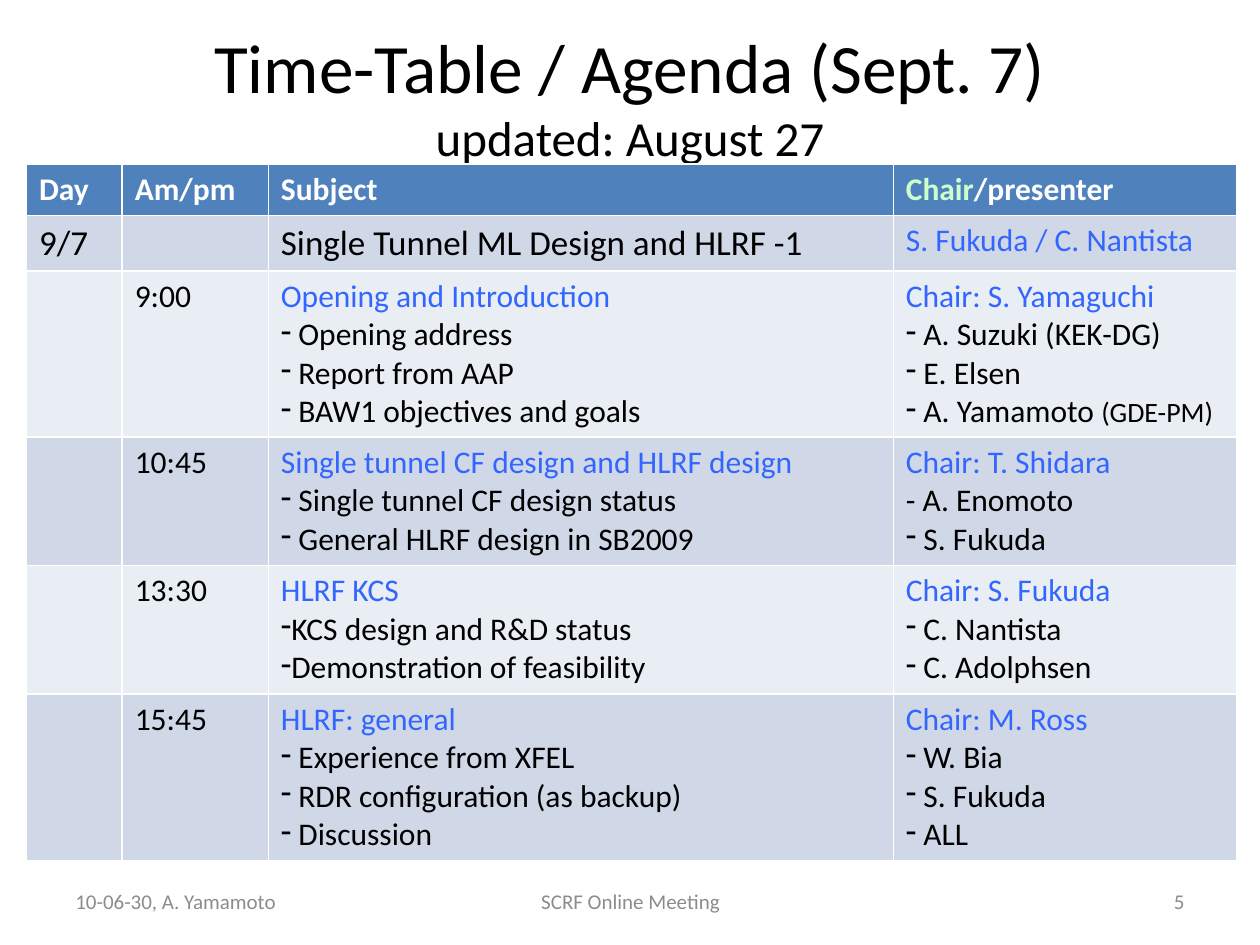
import pptx
import pptx.dml.color
import pptx.enum.text
import pptx.util
from lxml import etree
from pptx.util import Inches

FONT = "Calibri"
COLORS = {
    "text": "000000",
    "heading": "3366FF",
    "header_text": "FFFFFF",
    "chair": "CCFFCC",
    "footer": "8C8C8C",
    "header_fill": "4F81BD",
    "dark_band": "D0D8E8",
    "light_band": "E9EDF4",
}
ALIGN = pptx.enum.text.PP_ALIGN

COLUMN_WIDTHS = [0.76, 1.16, 4.96, 2.73]
ROW_HEIGHTS = [0.41, 0.44, 1.32, 1.02, 1.02, 1.32]
HEADERS = ["Day", "Am/pm", "Subject"]

# Start time, subject lines, presenter lines; the first line is the heading
SESSIONS = [
    ("9:00",
     ["Opening and Introduction", " Opening address", " Report from AAP",
      " BAW1 objectives and goals"],
     ["Chair: S. Yamaguchi", " A. Suzuki (KEK-DG)", " E. Elsen",
      " A. Yamamoto "]),
    ("10:45",
     ["Single tunnel CF design and HLRF design",
      " Single tunnel CF design status", " General HLRF design in SB2009"],
     ["Chair: T. Shidara", "- A. Enomoto", " S. Fukuda"]),
    ("13:30",
     ["HLRF KCS", "KCS design and R&D status", "Demonstration of feasibility"],
     ["Chair: S. Fukuda", " C. Nantista", " C. Adolphsen"]),
    ("15:45",
     ["HLRF: general", " Experience from XFEL",
      " RDR configuration (as backup)", " Discussion"],
     ["Chair: M. Ross", " W. Bia", " S. Fukuda", " ALL"]),
]


def rgb(name):
    return pptx.dml.color.RGBColor.from_string(COLORS[name])


def style_run(run, size=18, color="text", bold=False):
    run.font.name = FONT
    run.font.size = pptx.util.Pt(size)
    run.font.bold = bold
    run.font.color.rgb = rgb(color)


def add_run(paragraph, text, **style):
    run = paragraph.add_run()
    run.text = text
    style_run(run, **style)


def add_dash_bullet(paragraph):
    properties = paragraph._p.get_or_add_pPr()
    properties.set("marL", "0")
    properties.set("indent", "0")
    bullet = etree.SubElement(properties, pptx.oxml.ns.qn("a:buChar"))
    bullet.set("char", "-")


def add_label(slide, left, top, width, height, text, align, sizes, color):
    """Text box with one size for each line of its text."""
    box = slide.shapes.add_textbox(*map(Inches, (left, top, width, height)))
    frame = box.text_frame
    frame.word_wrap = True
    frame.vertical_anchor = pptx.enum.text.MSO_ANCHOR.MIDDLE
    paragraph = frame.paragraphs[0]
    paragraph.text = text
    paragraph.alignment = align
    for run, size in zip(paragraph.runs, sizes):
        style_run(run, size, color)


def fill_lines(cell, lines):
    """Coloured heading line followed by dashed items."""
    cell.text_frame.text = "\n".join(lines)
    for index, paragraph in enumerate(cell.text_frame.paragraphs):
        if index and not lines[index].startswith("-"):
            add_dash_bullet(paragraph)
        style_run(paragraph.runs[0], color="text" if index else "heading")


def add_agenda(slide):
    agenda = slide.shapes.add_table(
        len(ROW_HEIGHTS), len(COLUMN_WIDTHS), Inches(0.21), Inches(1.3),
        Inches(sum(COLUMN_WIDTHS)), Inches(sum(ROW_HEIGHTS))).table
    for column, width in zip(agenda.columns, COLUMN_WIDTHS):
        column.width = Inches(width)
    for index, (row, height) in enumerate(zip(agenda.rows, ROW_HEIGHTS)):
        row.height = Inches(height)
        band = "dark_band" if index % 2 else "light_band"
        for cell in row.cells:
            cell.fill.solid()
            cell.fill.fore_color.rgb = rgb(band if index else "header_fill")

    # Header row
    for column, header in enumerate(HEADERS):
        add_run(agenda.cell(0, column).text_frame.paragraphs[0], header,
                color="header_text", bold=True)
    presenter_header = agenda.cell(0, 3).text_frame.paragraphs[0]
    add_run(presenter_header, "Chair", color="chair", bold=True)
    add_run(presenter_header, "/presenter", color="header_text", bold=True)

    # Day row
    for column, text in ((0, "9/7"), (2, "Single Tunnel ML Design and HLRF -1")):
        add_run(agenda.cell(1, column).text_frame.paragraphs[0], text, size=20)
    fill_lines(agenda.cell(1, 3), ["S. Fukuda / C. Nantista"])

    # Session rows
    for row, (start, subjects, presenters) in enumerate(SESSIONS, start=2):
        add_run(agenda.cell(row, 1).text_frame.paragraphs[0], start)
        fill_lines(agenda.cell(row, 2), subjects)
        fill_lines(agenda.cell(row, 3), presenters)
    opening_presenters = agenda.cell(2, 3).text_frame.paragraphs
    add_run(opening_presenters[-1], "(GDE-PM)", size=16)


def main():
    deck = pptx.Presentation()
    deck.slide_width, deck.slide_height = Inches(10), Inches(7.5)
    slide = deck.slides.add_slide(deck.slide_layouts[6])

    # Title
    add_label(slide, 0.5, 0.3, 9, 0.91,
              "Time-Table / Agenda (Sept. 7)\vupdated: August 27",
              ALIGN.CENTER, [39.6, 28], "text")

    add_agenda(slide)

    # Footer
    for left, width, text, align in (
            (0.5, 2.33, "10-06-30, A. Yamamoto", ALIGN.LEFT),
            (3.42, 3.17, "SCRF Online Meeting", ALIGN.CENTER),
            (7.17, 2.33, "5", ALIGN.RIGHT)):
        add_label(slide, left, 6.95, width, 0.4, text, align, [12], "footer")

    deck.save("out.pptx")


if __name__ == "__main__":
    main()
